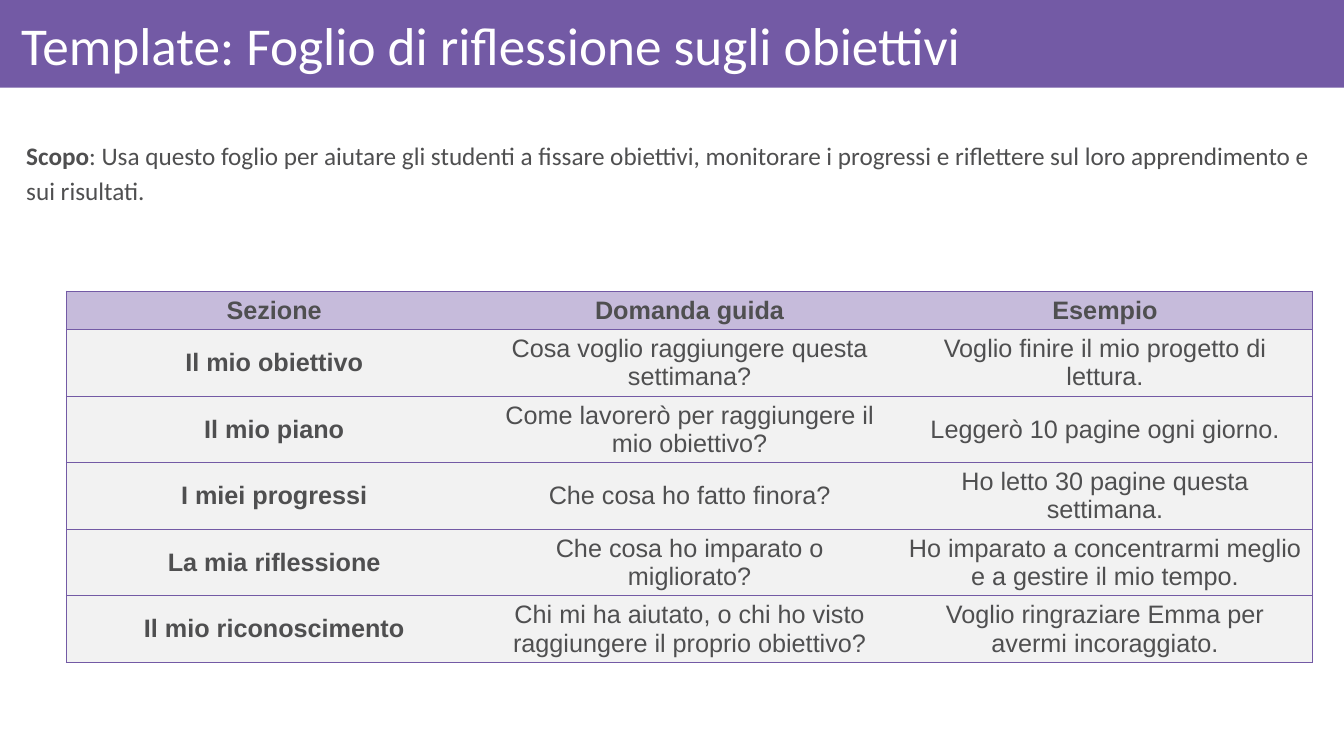
import pptx
import pptx.dml.color
import pptx.enum.shapes
import pptx.enum.text
import pptx.oxml.ns
import pptx.util
from lxml import etree

RGBColor = pptx.dml.color.RGBColor
PURPLE = RGBColor(0x73, 0x5A, 0xA5)
LILAC = RGBColor(0xC6, 0xBB, 0xDB)
PALE = RGBColor(0xF2, 0xF2, 0xF2)
INK = RGBColor(0x4F, 0x4F, 0x50)
WHITE = RGBColor(0xFF, 0xFF, 0xFF)

WIDTH = pptx.util.Inches(13.33)
HEIGHT = pptx.util.Inches(7.5)

HEADING = "Template: Foglio di riflessione sugli obiettivi"
PURPOSE = (
    "Scopo",
    ": Usa questo foglio per aiutare gli studenti a fissare obiettivi, monitorare "
    "i progressi e riflettere sul loro apprendimento e sui risultati.",
)
REFLECTION = [
    ("Sezione", "Domanda guida", "Esempio"),
    ("Il mio obiettivo", "Cosa voglio raggiungere questa settimana?",
     "Voglio finire il mio progetto di lettura."),
    ("Il mio piano", "Come lavorerò per raggiungere il mio obiettivo?",
     "Leggerò 10 pagine ogni giorno."),
    ("I miei progressi", "Che cosa ho fatto finora?",
     "Ho letto 30 pagine questa settimana."),
    ("La mia riflessione", "Che cosa ho imparato o migliorato?",
     "Ho imparato a concentrarmi meglio e a gestire il mio tempo."),
    ("Il mio riconoscimento", "Chi mi ha aiutato, o chi ho visto raggiungere il proprio obiettivo?",
     "Voglio ringraziare Emma per avermi incoraggiato."),
]


def place(holder, left, top, width, height):
    """Position a placeholder by inches."""
    holder.left, holder.top, holder.width, holder.height = map(
        pptx.util.Inches, (left, top, width, height))


def style(paragraph, face, size, color):
    """Set the font that all runs of a paragraph share."""
    paragraph.font.name = face
    paragraph.font.size = pptx.util.Pt(size)
    paragraph.font.color.rgb = color


def add_heading(slide):
    """Write the title over a full-width band."""
    title = slide.shapes.title
    band = slide.shapes.add_shape(
        pptx.enum.shapes.MSO_SHAPE.RECTANGLE, 0, 0, WIDTH, pptx.util.Inches(0.87))
    band.shadow.inherit = False
    band.fill.solid()
    band.fill.fore_color.rgb = PURPLE
    band.line.fill.background()
    title.element.addprevious(band.element)

    place(title, 0.11, 0.09, 13.06, 0.78)
    frame = title.text_frame
    frame.text = HEADING
    frame.auto_size = pptx.enum.text.MSO_AUTO_SIZE.NONE
    frame.vertical_anchor = pptx.enum.text.MSO_ANCHOR.MIDDLE
    frame.margin_left = pptx.util.Inches(0.1)
    frame.margin_right = frame.margin_top = frame.margin_bottom = pptx.util.Inches(0.06)
    paragraph = frame.paragraphs[0]
    paragraph.alignment = pptx.enum.text.PP_ALIGN.LEFT
    paragraph.line_spacing = 0.9
    style(paragraph, "Calibri", 38, WHITE)


def add_purpose(slide):
    """Write the purpose statement in the body placeholder."""
    body = slide.placeholders[1]
    place(body, 0.16, 1.3, 13.06, 5.78)
    body.text_frame.auto_size = pptx.enum.text.MSO_AUTO_SIZE.NONE
    paragraph = body.text_frame.paragraphs[0]
    for index, wording in enumerate(PURPOSE):
        run = paragraph.add_run()
        run.text = wording
        run.font.bold = index == 0
    style(paragraph, "Calibri", 18, INK)
    paragraph.line_spacing = 1.15
    paragraph.space_before = paragraph.space_after = pptx.util.Pt(12)
    properties = paragraph._p.get_or_add_pPr()
    properties.set("marL", "0")
    properties.set("indent", "0")
    etree.SubElement(properties, pptx.oxml.ns.qn("a:buNone"))


def add_border(cell, side, visible):
    """Draw or hide one border of a cell."""
    properties = cell._tc.get_or_add_tcPr()
    border = etree.SubElement(properties, pptx.oxml.ns.qn(f"a:ln{side}"), w="12700")
    if visible:
        fill = etree.SubElement(border, pptx.oxml.ns.qn("a:solidFill"))
        etree.SubElement(fill, pptx.oxml.ns.qn("a:srgbClr"), val=str(PURPLE))
    else:
        etree.SubElement(border, pptx.oxml.ns.qn("a:noFill"))


def fill_cell(cell, wording, is_header, is_first, is_last):
    """Write and format one cell of the reflection table."""
    cell.text = wording
    cell.vertical_anchor = pptx.enum.text.MSO_ANCHOR.MIDDLE
    paragraph = cell.text_frame.paragraphs[0]
    paragraph.alignment = pptx.enum.text.PP_ALIGN.CENTER
    style(paragraph, "Arial", 18, INK)
    paragraph.font.bold = is_header or is_first
    for side, visible in (("L", is_first), ("R", is_last), ("T", True), ("B", True)):
        add_border(cell, side, visible)
    cell.fill.solid()
    cell.fill.fore_color.rgb = LILAC if is_header else PALE


def add_reflection(slide):
    """Build the table of sections, guiding questions and examples."""
    rows, columns = len(REFLECTION), len(REFLECTION[0])
    column_width, row_height = pptx.util.Inches(4.12), pptx.util.Inches(0.25)
    table = slide.shapes.add_table(
        rows, columns, pptx.util.Inches(0.66), pptx.util.Inches(2.89),
        column_width * columns, row_height * rows).table
    table.first_row = table.horz_banding = False
    for row, wordings in enumerate(REFLECTION):
        for column, wording in enumerate(wordings):
            fill_cell(table.cell(row, column), wording,
                      row == 0, column == 0, column == columns - 1)


def main():
    """Build the goal reflection slide and save it."""
    deck = pptx.Presentation()
    deck.slide_width, deck.slide_height = WIDTH, HEIGHT
    slide = deck.slides.add_slide(deck.slide_layouts[1])
    add_heading(slide)
    add_purpose(slide)
    add_reflection(slide)
    deck.save("out.pptx")


if __name__ == "__main__":
    main()
